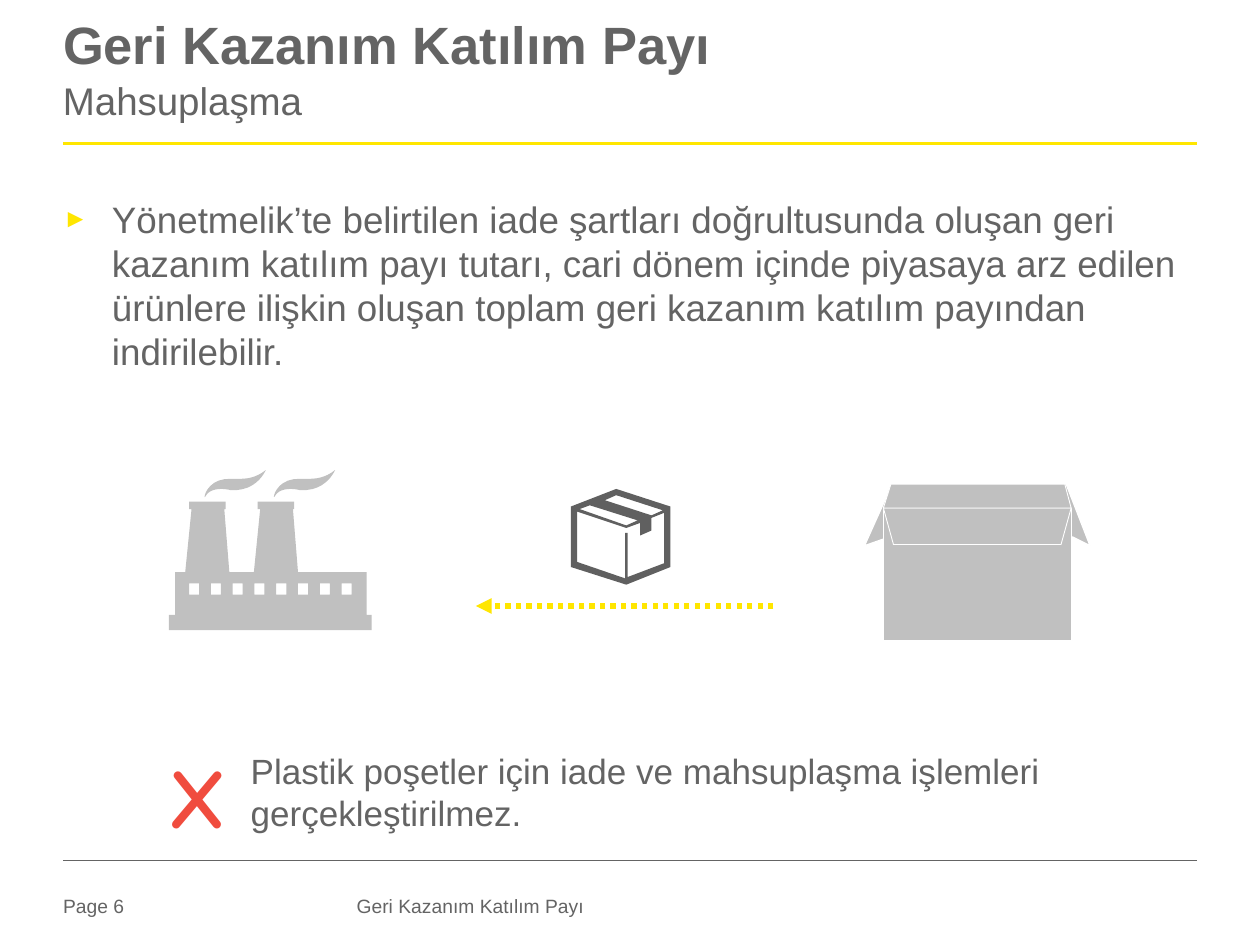
from lxml import etree
from pptx import Presentation
from pptx.dml.color import RGBColor
from pptx.enum.dml import MSO_LINE
from pptx.enum.shapes import MSO_CONNECTOR
from pptx.enum.text import MSO_ANCHOR, MSO_AUTO_SIZE, PP_ALIGN
from pptx.oxml.ns import qn
from pptx.util import Pt

GREY = RGBColor(0x64, 0x64, 0x64)
YELLOW = RGBColor(0xFF, 0xE6, 0x00)
SILVER = RGBColor(0xC0, 0xC0, 0xC0)
CARTON = RGBColor(0x60, 0x60, 0x60)
RED = RGBColor(0xF0, 0x4C, 0x3E)
WHITE = RGBColor(0xFF, 0xFF, 0xFF)

STRAIGHT = MSO_CONNECTOR.STRAIGHT
DOTTED = MSO_LINE.ROUND_DOT
TOP = MSO_ANCHOR.TOP
LEFT = PP_ALIGN.LEFT
NO_FIT = MSO_AUTO_SIZE.NONE

UNIT = 0.72  # points per step of the icon grids


def write(s, text, size, color=GREY, bold=False, font="Arial", spacing=None):
    tf = s.text_frame
    tf.word_wrap = True
    tf.auto_size = NO_FIT
    tf.vertical_anchor = TOP
    tf.margin_left = tf.margin_right = tf.margin_top = tf.margin_bottom = 0
    p = tf.paragraphs[0]
    p.alignment = LEFT
    if spacing:
        p.line_spacing = spacing
    r = p.add_run()
    r.text = text
    r.font.name = font
    r.font.size = Pt(size)
    r.font.bold = bold
    r.font.color.rgb = color
    return p


def add_text(sp, box, text, size, **style):
    return write(sp.add_textbox(*map(Pt, box)), text, size, **style)


def add_line(sp, x1, y1, x2, y2, color, width):
    s = sp.add_connector(STRAIGHT, Pt(x1), Pt(y1), Pt(x2), Pt(y2))
    s.line.color.rgb = color
    s.line.width = Pt(width)
    etree.SubElement(s.line._get_or_add_ln().getparent(), qn("a:effectLst"))
    return s


def add_outline(sp, left, top, contours, fill, line_width=None):
    """One freeform whose inner contours are holes."""
    def place(x, y):
        return Pt(left + x * UNIT), Pt(top + y * UNIT)

    builder = None
    for contour in contours:
        start, *rest = [place(x, y) for x, y in contour]
        if builder is None:
            builder = sp.build_freeform(*start, scale=1.0)
        else:
            builder.move_to(*start)
        builder.add_line_segments(rest, close=True)
    s = builder.convert_to_shape()
    s.shadow.inherit = False
    s.fill.solid()
    s.fill.fore_color.rgb = fill
    if line_width:
        s.line.color.rgb = WHITE
        s.line.width = Pt(line_width)
    else:
        s.line.fill.background()


def curve(start, segments, steps=10):
    """Points along a chain of cubic curves."""
    points = [start]
    for a, b, end in segments:
        p0 = points[-1]
        for i in range(1, steps + 1):
            t = i / steps
            u = 1 - t
            points.append(tuple(
                u**3 * p0[k] + 3 * u * u * t * a[k] + 3 * u * t * t * b[k] + t**3 * end[k]
                for k in (0, 1)))
    return points


def shift(points, dx):
    return [(x + dx, y) for x, y in points]


def add_header(slide, left, top, width):
    title = slide.shapes.title
    title.left, title.top, title.width, title.height = map(Pt, (left, top, width, 29.5))
    write(title, "Geri Kazanım Katılım Payı", 30, bold=True, spacing=0.85)
    add_text(slide.shapes, (left, top + 36, width, 33), "Mahsuplaşma", 22, spacing=0.85)
    add_line(slide.shapes, left, top + 70, left + width, top + 70, YELLOW, 1.5)


def add_body(sp, box):
    p = add_text(sp, box, "Yönetmelik’te belirtilen iade şartları doğrultusunda oluşan geri "
                 "kazanım katılım payı tutarı, cari dönem içinde piyasaya arz edilen "
                 "ürünlere ilişkin oluşan toplam geri kazanım katılım payından "
                 "indirilebilir.", 21)
    pPr = p._p.get_or_add_pPr()
    pPr.set("marL", str(Pt(28)))
    pPr.set("indent", str(-Pt(28)))
    color = etree.SubElement(pPr, qn("a:buClr"))
    etree.SubElement(color, qn("a:srgbClr"), val=str(YELLOW))
    etree.SubElement(pPr, qn("a:buSzPct"), val="70000")
    etree.SubElement(pPr, qn("a:buFont"), typeface="Arial")
    etree.SubElement(pPr, qn("a:buChar"), char="►")


def add_factory(sp, left, top):
    smoke = curve((105, 7), [((113, 7), (122, 8), (132, 0)),
                             ((130, 4), (123, 17), (104, 16)),
                             ((101, 15), (88, 13), (84, 21)),
                             ((82, 25), (84, 6), (105, 7))])
    chimney = [(13, 81), (18, 31), (16, 31), (16, 25), (45, 25), (45, 31), (44, 31), (48, 81)]
    building = [(161, 115), (161, 127), (0, 127), (0, 115), (5, 115), (5, 81),
                *chimney, *shift(chimney, 54.5), (157, 81), (157, 115)]
    window = [(16, 90), (24, 90), (24, 99), (16, 99)]
    windows = [shift(window, 17.3 * i) for i in range(8)]
    add_outline(sp, left, top, [smoke, shift(smoke, -55), building, *windows], SILVER)


def add_open_box(sp, left, top):
    silhouette = [(160, 0), (22, 0), (0, 49), (17, 43), (17, 124),
                  (165, 124), (165, 42), (179, 49)]
    add_outline(sp, left, top, [silhouette], SILVER, 0.75)
    panels = [
        [(15, 19), (164, 19), (164, 124), (15, 124)],  # front
        [(15, 19), (164, 19), (156, 48), (23, 48)],    # front flap
        [(21, 0), (159, 0), (164, 19), (15, 19)],      # back flap
    ]
    for panel in panels:
        add_outline(sp, left, top, [panel], SILVER, 0.5)


def add_carton(sp, left, top):
    outer = [(0, 14), (0, 62), (44, 76), (79, 62), (79, 14), (36, 0)]
    top_left = [(15, 13), (53, 25), (44, 29), (7, 16)]
    top_right = [(73, 17), (64, 21), (27, 9), (36, 5)]
    sides = [(5, 18), (44, 31), (55, 27), (55, 37), (64, 33), (64, 23), (74, 19),
             (74, 59), (45, 70), (45, 35), (43, 35), (43, 71), (5, 58)]
    add_outline(sp, left, top, [outer, top_left, top_right, sides], CARTON)


def add_return_flow(sp, left, top):
    add_factory(sp, left, top)
    add_open_box(sp, left + 397.5, top + 8)
    arrow = add_line(sp, left + 345.5, top + 77.7, left + 175.5, top + 77.7, YELLOW, 3)
    arrow.line.dash_style = DOTTED
    etree.SubElement(arrow.line._get_or_add_ln(), qn("a:tailEnd"), type="triangle")
    add_carton(sp, left + 229.7, top + 10.8)


def add_warning(sp, left, top):
    add_text(sp, (left + 46.8, top, 576.5, 62.5),
             "Plastik poşetler için iade ve mahsuplaşma işlemleri gerçekleştirilmez.", 20)
    p = add_text(sp, (left, top + 5.8, 37.5, 49.7), "X", 48, color=RED, bold=True,
                 font="Comic Neue", spacing=0.85)
    p.space_after = Pt(6)


def add_footer(sp, left, top, width):
    add_line(sp, left, top, left + width, top, GREY, 0.25)
    add_text(sp, (left, top + 19.5, 57, 16), "Page 6", 11)
    add_text(sp, (left + 167.8, top + 19.5, 270.7, 16), "Geri Kazanım Katılım Payı", 11)


def main():
    prs = Presentation()
    prs.slide_width, prs.slide_height = Pt(720), Pt(540)
    slide = prs.slides.add_slide(prs.slide_layouts[5])
    sp = slide.shapes
    add_header(slide, 36, 12.2, 648)
    add_body(sp, (36, 112.3, 648, 78.5))
    add_return_flow(sp, 96.5, 268.6)
    add_warning(sp, 96.5, 428.4)
    add_footer(sp, 36, 491.7, 648)
    prs.save("out.pptx")


if __name__ == "__main__":
    main()
